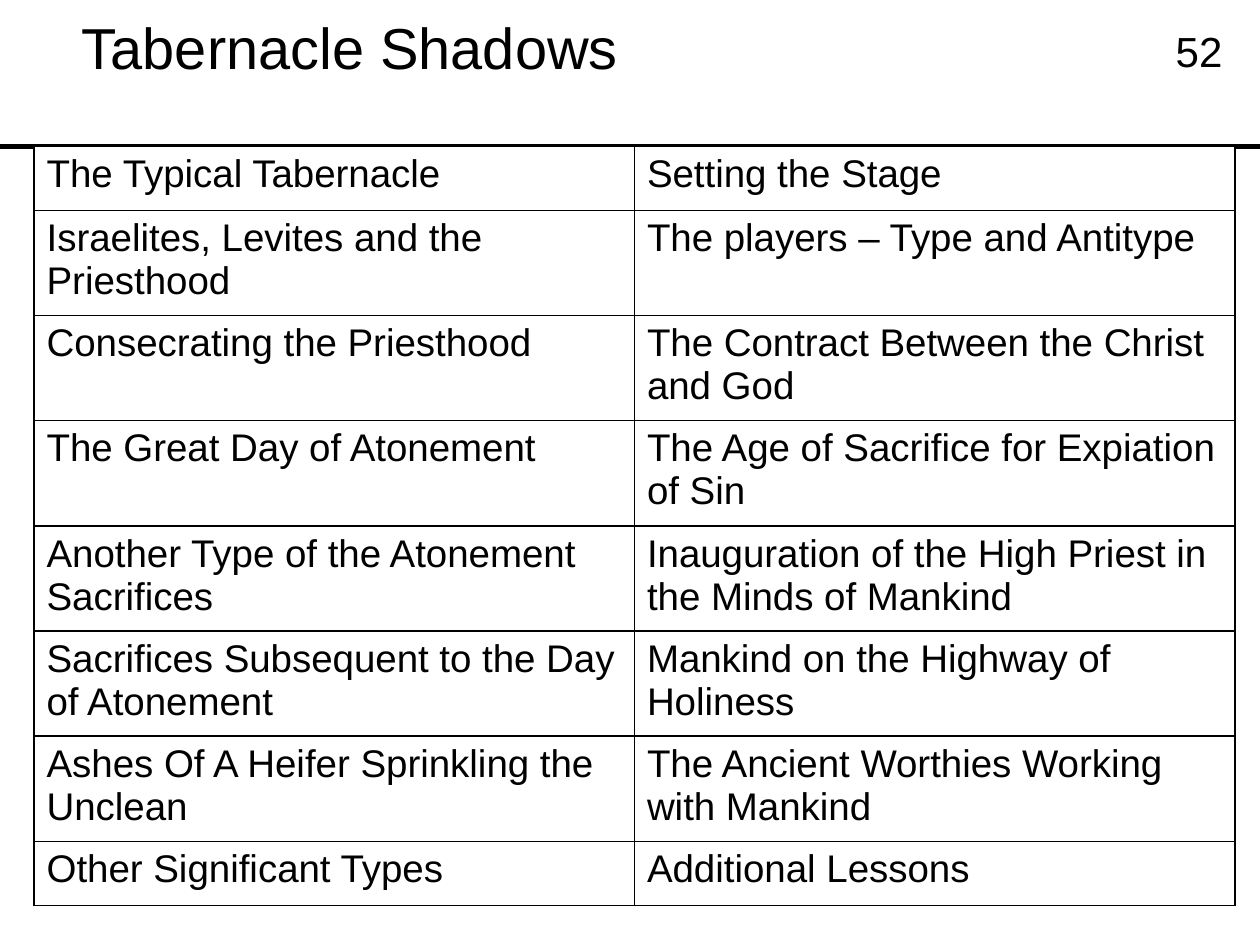
from lxml.etree import SubElement
from pptx import Presentation
from pptx.dml.color import RGBColor
from pptx.enum.shapes import MSO_CONNECTOR as Conn
from pptx.enum.text import MSO_ANCHOR as Anchor, PP_ALIGN as Align
from pptx.oxml import parse_xml
from pptx.oxml.ns import nsdecls, qn
from pptx.util import Inches, Pt

BLACK = RGBColor(0, 0, 0)
WHITE = RGBColor(255, 255, 255)
FONT = "Arial"

# Content
TITLE = "Tabernacle Shadows"
PAGE = "52"
ROWS = [
    ("The Typical Tabernacle", "Setting the Stage"),
    ("Israelites, Levites and the Priesthood", "The players – Type and Antitype"),
    ("Consecrating the Priesthood", "The Contract Between the Christ and God"),
    ("The Great Day of Atonement", "The Age of Sacrifice for Expiation of Sin"),
    ("Another Type of the Atonement Sacrifices",
     "Inauguration of the High Priest in the Minds of Mankind"),
    ("Sacrifices Subsequent to the Day of Atonement",
     "Mankind on the Highway of Holiness"),
    ("Ashes Of A Heifer Sprinkling the Unclean",
     "The Ancient Worthies Working with Mankind"),
    ("Other Significant Types", "Additional Lessons"),
]

# Layout in inches: the rule is also the top of the table
WIDE, HIGH = 10, 7.5
TOP, LEFT, SPAN = 1.16, 0.27, 9.53
ONE, TWO = 0.51, 0.835  # height of rows with one and two lines


def box(*sizes):
    return [Inches(size) for size in sizes]


def write(frame, text, size, align=Align.LEFT, anchor=Anchor.TOP, space=None):
    frame.word_wrap = True
    frame.vertical_anchor = anchor
    para = frame.paragraphs[0]
    para.alignment = align
    para.line_spacing = space
    run = para.add_run()
    run.text = text
    run.font.size = Pt(size)
    run.font.name = FONT
    run.font.color.rgb = BLACK


def edge(cell, width=1):
    props = cell._tc.get_or_add_tcPr()
    for spot, side in enumerate(("lnL", "lnR", "lnT", "lnB")):
        props.insert(spot, parse_xml(
            f'<a:{side} {nsdecls("a")} w="{Pt(width)}"><a:solidFill>'
            f'<a:srgbClr val="{BLACK}"/></a:solidFill></a:{side}>'))


deck = Presentation()
deck.slide_width, deck.slide_height = box(WIDE, HIGH)
slide = deck.slides.add_slide(deck.slide_layouts[5])
shapes = slide.shapes

# Rule across the slide
rule = shapes.add_connector(Conn.STRAIGHT, *box(0, TOP, WIDE, TOP))
rule.line.color.rgb = BLACK
rule.line.width = Pt(2.75)
SubElement(rule._element.spPr, qn("a:effectLst"))

# Title and page number
head = shapes.title
head.left, head.top, head.width, head.height = box(0.55, 0.02, 8.62, 0.76)
write(head.text_frame, TITLE, 33, anchor=Anchor.MIDDLE, space=0.9)
page = shapes.add_textbox(*box(7.55, 0.2, 2.25, 0.4))
write(page.text_frame, PAGE, 24, align=Align.RIGHT, anchor=Anchor.MIDDLE)

# Table: the first and last rows hold one line, the others two
tall = [ONE] + [TWO] * (len(ROWS) - 2) + [ONE]
grid = shapes.add_table(len(ROWS), 2, *box(LEFT, TOP, SPAN, sum(tall))).table
grid.first_row = grid.horz_banding = False
for col in grid.columns:
    col.width = Inches(SPAN / 2)
for r, (texts, height) in enumerate(zip(ROWS, tall)):
    grid.rows[r].height = Inches(height)
    for c, text in enumerate(texts):
        cell = grid.cell(r, c)
        cell.fill.solid()
        cell.fill.fore_color.rgb = WHITE
        edge(cell)
        write(cell.text_frame, text, 22)

deck.save("out.pptx")
